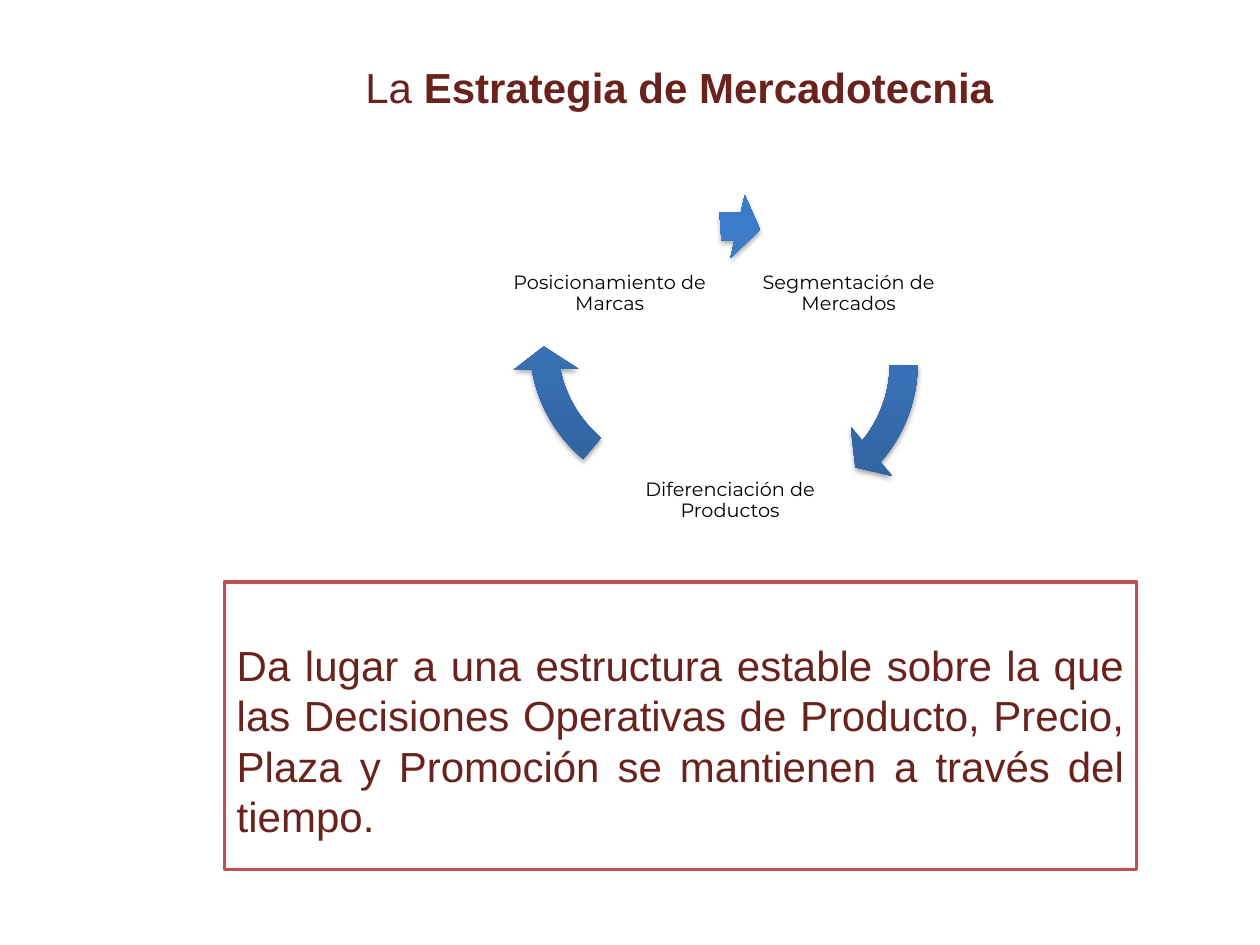
from lxml import etree
from pptx import Presentation
from pptx.dml.color import RGBColor
from pptx.enum.shapes import MSO_SHAPE
from pptx.enum.text import MSO_ANCHOR, PP_ALIGN
from pptx.oxml import parse_xml
from pptx.oxml.ns import nsdecls, qn
from pptx.util import Pt

RECT, ARROW = MSO_SHAPE.RECTANGLE, MSO_SHAPE.CIRCULAR_ARROW
TOP, MIDDLE = MSO_ANCHOR.TOP, MSO_ANCHOR.MIDDLE
LEFT, CENTER, JUSTIFY = PP_ALIGN.LEFT, PP_ALIGN.CENTER, PP_ALIGN.JUSTIFY
WINE, RED, WHITE, BLACK = "6A221D", "C0504D", "FFFFFF", "000000"
SHADES = [(0, "2F5F99"), (80, "3D7CC7"), (100, "3A7CCB")]


def color(code):
    return RGBColor.from_string(code)


class Deck:
    font, size = "Arial", 24
    small_font, small = "Montserrat", 11

    def __init__(self):
        self.prs = Presentation()
        self.prs.slide_width, self.prs.slide_height = Pt(720), Pt(540)
        self.slide = self.prs.slides.add_slide(self.prs.slide_layouts[5])

    def place(self, shape, box):
        shape.left, shape.top, shape.width, shape.height = map(Pt, box)

    def style(self, run, font, size, code, bold=False):
        run.font.name, run.font.size = font, Pt(size)
        run.font.bold, run.font.color.rgb = bold, color(code)

    def title(self, parts, box):
        shape = self.slide.shapes.title
        self.place(shape, box)
        frame = shape.text_frame
        frame.vertical_anchor = TOP
        para = frame.paragraphs[0]
        para.alignment = LEFT
        for text, bold in parts:
            run = para.add_run()
            run.text = text
            self.style(run, self.font, self.size, WINE, bold)

    def panel(self, text, box):
        shape = self.slide.shapes.add_shape(RECT, *map(Pt, box))
        shape.shadow.inherit = False
        shape.fill.solid()
        shape.fill.fore_color.rgb = color(WHITE)
        shape.line.color.rgb = color(RED)
        shape.line.width = Pt(2)
        frame = shape.text_frame
        frame.text = text
        frame.word_wrap = True
        frame.vertical_anchor = TOP
        frame.margin_top = Pt(32.8)
        para = frame.paragraphs[0]
        para.alignment, para.line_spacing = JUSTIFY, Pt(28.8)
        self.style(para.runs[0], self.font, self.size, WINE)

    def label(self, text, box):
        frame = self.slide.shapes.add_textbox(*map(Pt, box)).text_frame
        frame.text = text
        frame.word_wrap = True
        frame.vertical_anchor = MIDDLE
        frame.margin_left = frame.margin_right = Pt(1.4)
        frame.margin_top = frame.margin_bottom = Pt(1.4)
        para = frame.paragraphs[0]
        para.alignment, para.line_spacing = CENTER, 0.9
        self.style(para.runs[0], self.small_font, self.small, BLACK)

    def arrow(self, left, top, end, start):
        side = Pt(192.2)
        shape = self.slide.shapes.add_shape(ARROW, Pt(left), Pt(top), side, side)
        for i, value in enumerate((0.083, 5.763, end, start, 0.096)):
            shape.adjustments[i] = value
        shape.line.fill.background()
        shape.fill.gradient()
        grad = shape._element.spPr.find(qn("a:gradFill"))
        stops = grad.find(qn("a:gsLst"))
        for stop in list(stops):
            stops.remove(stop)
        for pos, code in SHADES:
            stop = etree.SubElement(stops, qn("a:gs"), pos=str(pos * 1000))
            etree.SubElement(stop, qn("a:srgbClr"), val=code)
        shape.fill.gradient_angle = 90
        shape._element.spPr.append(parse_xml(
            f'<a:effectLst {nsdecls("a")}><a:outerShdw blurRad="{Pt(3.1)}" '
            f'dist="{Pt(1.8)}" dir="5400000" rotWithShape="0">'
            f'<a:srgbClr val="{BLACK}"><a:alpha val="35000"/></a:srgbClr>'
            '</a:outerShdw></a:effectLst>'))


def main():
    deck = Deck()
    deck.panel(
        "Da lugar a una estructura estable sobre la que las Decisiones "
        "Operativas de Producto, Precio, Plaza y Promoción se mantienen "
        "a través del tiempo.", (128.2, 332.6, 521.3, 164.2))
    deck.title([("La ", False), ("Estrategia de Mercadotecnia", True)],
               (201.6, 31.7, 447.8, 36))
    cycle = [
        ("Segmentación de Mercados", (434.2, 127.4, 101.5, 81.4),
         (342.7, 111.6, 24.194, 0.522)),
        ("Diferenciación de Productos", (366.5, 245.5, 101.5, 81.4),
         (292.3, 100.8, 101.716, 78.043)),
        ("Posicionamiento de Marcas", (285.8, 127.4, 125.3, 81.4),
         (321.1, 110.9, 163.916, 159.578)),
    ]
    for text, box, turn in cycle:
        deck.label(text, box)
        deck.arrow(*turn)
    deck.prs.save("out.pptx")


if __name__ == "__main__":
    main()
